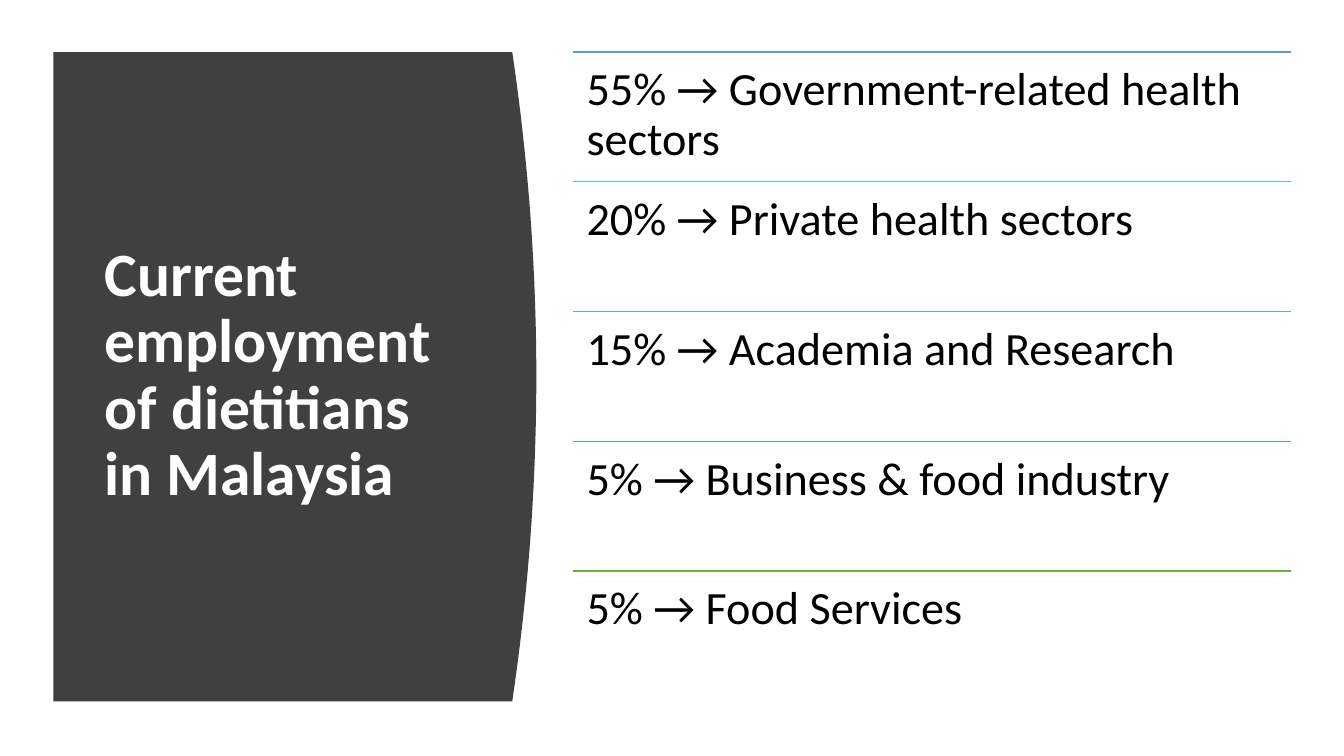
from dataclasses import dataclass

from lxml.etree import SubElement
from pptx import Presentation
from pptx.dml.color import RGBColor
from pptx.enum.shapes import MSO_CONNECTOR
from pptx.enum.text import MSO_ANCHOR
from pptx.oxml.ns import qn
from pptx.util import Pt


@dataclass(frozen=True)
class Theme:
    """Colours, font and type sizes of the slide."""
    font: str = "Calibri"
    panel: str = "404040"
    title: str = "FFFFFF"
    body: str = "000000"
    rules: tuple = ("5B9BD5", "54CCCD", "4DC58D", "48BB4F", "70AD47")
    title_size: int = 44
    body_size: int = 33


THEME = Theme()
SECTORS = (
    "55% → Government-related health sectors",
    "20% → Private health sectors",
    "15% → Academia and Research",
    "5% → Business & food industry",
    "5% → Food Services",
)


def add_text(s, box, text, size, color, bold=False, margins=(7.2, 3.6),
             anchor=MSO_ANCHOR.TOP):
    """Place one wrapped paragraph in the box."""
    tf = s.shapes.add_textbox(*map(Pt, box)).text_frame
    tf.word_wrap = True
    tf.vertical_anchor = anchor
    tf.margin_left = tf.margin_right = Pt(margins[0])
    tf.margin_top = tf.margin_bottom = Pt(margins[1])
    p = tf.paragraphs[0]
    p.line_spacing = 0.9
    r = p.add_run()
    r.text = text
    r.font.name = THEME.font
    r.font.size = Pt(size)
    r.font.bold = bold
    r.font.color.rgb = RGBColor.from_string(color)


def add_title_panel(s, box, title, bulge=17.2, steps=40):
    """Draw the dark panel with a bowed right side and its title."""
    x, y, w, h = box
    side = x + w - bulge
    curve = [(side + bulge * (1 - (2 * i / steps - 1) ** 2), y + h * i / steps)
             for i in range(steps + 1)]
    fb = s.shapes.build_freeform(round(x * 100), round(y * 100), scale=Pt(1) / 100)
    fb.add_line_segments([(round(cx * 100), round(cy * 100))
                          for cx, cy in curve + [(x, y + h)]])
    sp = fb.convert_to_shape()
    sp.shadow.inherit = False
    sp.fill.solid()
    sp.fill.fore_color.rgb = RGBColor.from_string(THEME.panel)
    sp.line.fill.background()
    add_text(s, (x + 29.5, y + 42.7, 269.3, h - 86.4), title, THEME.title_size,
             THEME.title, bold=True, anchor=MSO_ANCHOR.MIDDLE)


def add_rule(s, x, y, w, color):
    """Draw a thin horizontal line."""
    ln = s.shapes.add_connector(MSO_CONNECTOR.STRAIGHT, Pt(x), Pt(y), Pt(x + w), Pt(y))
    ln.line.color.rgb = RGBColor.from_string(color)
    ln.line.width = Pt(1)
    SubElement(ln._element.spPr, qn("a:effectLst"))


def add_sector_list(s, box, sectors):
    """Stack the sectors in equal rows, each under its own line."""
    x, y, w, h = box
    row = h / len(sectors)
    for i, (text, color) in enumerate(zip(sectors, THEME.rules)):
        top = y + i * row
        add_rule(s, x, top, w, color)
        add_text(s, (x, top, w, row), text, THEME.body_size, THEME.body,
                 margins=(10, 10))


def main():
    """Build and save the slide."""
    prs = Presentation()
    prs.slide_width, prs.slide_height = Pt(960), Pt(540)
    s = prs.slides.add_slide(prs.slide_layouts[6])
    add_title_panel(s, (38.2, 37.2, 344.9, 463.8),
                    "Current employment of dietitians in Malaysia")
    add_sector_list(s, (409, 37.2, 512.8, 463.4), SECTORS)
    prs.save("out.pptx")


if __name__ == "__main__":
    main()
